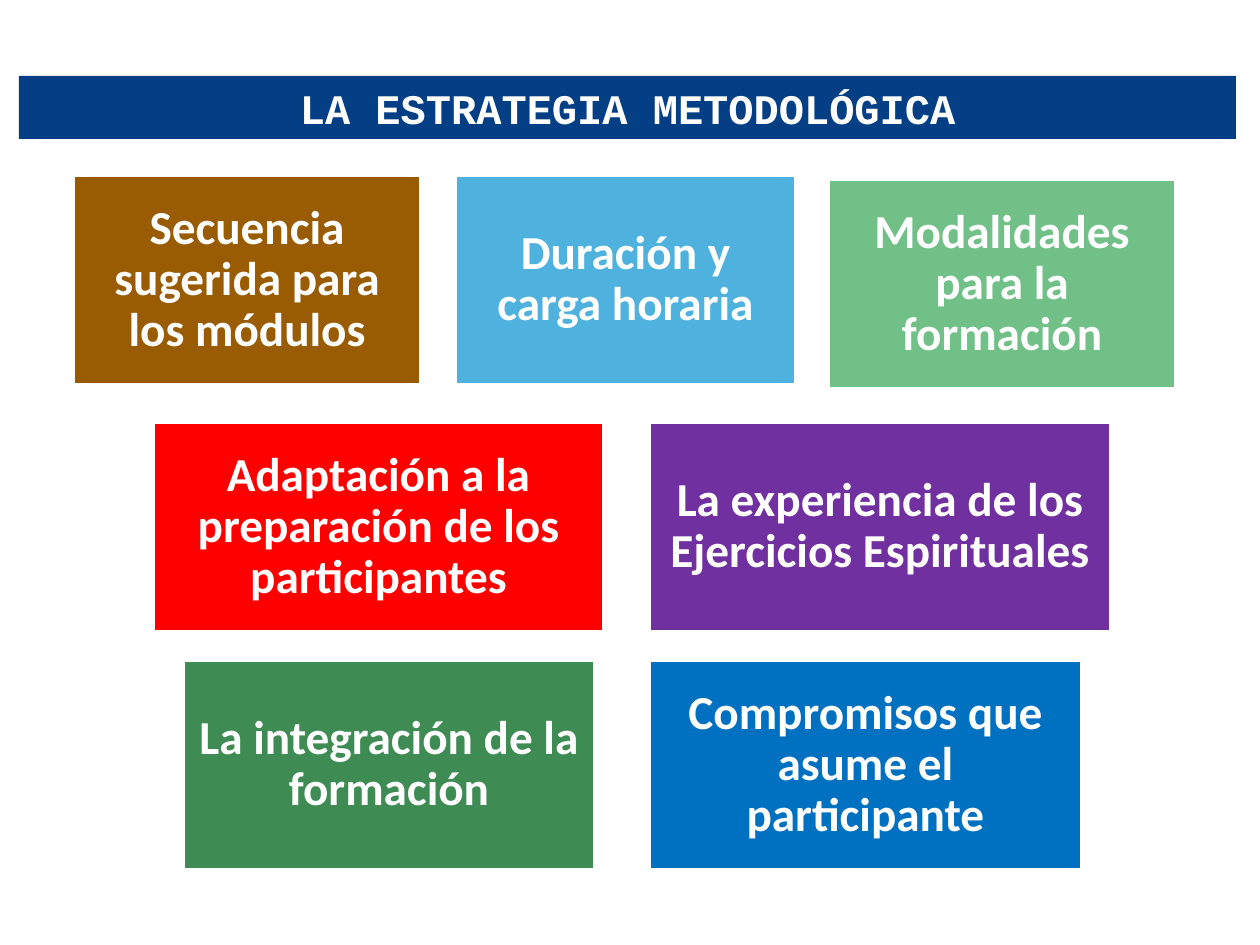
import pptx
import pptx.dml.color
import pptx.enum.shapes
import pptx.enum.text
import pptx.util

PX = 914400 / 126
WHITE = "FFFFFF"
CARD_HEIGHT = 208
CARD_MARGIN = 13

TITLE_FONT = {"name": "Courier New", "size": pptx.util.Pt(24), "bold": True}
CARD_FONT = {"name": "Calibri", "size": pptx.util.Pt(27), "bold": True}

# Each row: top, then cards as (left, top offset, width, fill, text)
CARD_ROWS = [
    (176, [
        (74, 0, 346, "995C02", "Secuencia sugerida para los módulos"),
        (456, 0, 339, "4FB2DE", "Duración y carga horaria"),
        (829, 4, 346, "70C087", "Modalidades para la formación"),
    ]),
    (423, [
        (154, 0, 449, "FF0000", "Adaptación a la preparación de los participantes"),
        (650, 0, 460, "7030A0", "La experiencia de los Ejercicios Espirituales"),
    ]),
    (661, [
        (184, 0, 410, "3E8B54", "La integración de la formación"),
        (650, 0, 431, "0070C0", "Compromisos que asume el participante"),
    ]),
]


def px(length):
    return pptx.util.Emu(round(length * PX))


def color(value):
    return pptx.dml.color.RGBColor.from_string(value)


def set_values(target, values):
    for name, value in values.items():
        setattr(target, name, value)


def add_rectangle(slide, box, fill, text, font):
    """Add a filled rectangle with centred white text."""
    shape = slide.shapes.add_shape(
        pptx.enum.shapes.MSO_SHAPE.RECTANGLE, *map(px, box))
    shape.shadow.inherit = False
    shape.fill.solid()
    shape.fill.fore_color.rgb = color(fill)
    shape.line.fill.background()
    shape.text_frame.word_wrap = True
    paragraph = shape.text_frame.paragraphs[0]
    paragraph.alignment = pptx.enum.text.PP_ALIGN.CENTER
    run = paragraph.add_run()
    run.text = text
    set_values(run.font, font)
    run.font.color.rgb = color(WHITE)
    return shape


def add_title(slide, box):
    shape = add_rectangle(slide, box, "043F86", "LA ESTRATEGIA METODOLÓGICA", TITLE_FONT)
    shape.text_frame.vertical_anchor = pptx.enum.text.MSO_ANCHOR.TOP


def add_card(slide, box, fill, text):
    shape = add_rectangle(slide, box, fill, text, CARD_FONT)
    shape.line.color.rgb = color(WHITE)
    shape.line.width = pptx.util.Pt(1.25)
    sides = ("left", "top", "right", "bottom")
    set_values(shape.text_frame, {f"margin_{side}": px(CARD_MARGIN) for side in sides})
    shape.text_frame.vertical_anchor = pptx.enum.text.MSO_ANCHOR.MIDDLE
    shape.text_frame.paragraphs[0].line_spacing = 0.9


def add_card_row(slide, top, cards):
    for left, offset, width, fill, text in cards:
        add_card(slide, (left, top + offset, width, CARD_HEIGHT), fill, text)


def main():
    presentation = pptx.Presentation()
    set_values(presentation, {"slide_width": px(1260), "slide_height": px(945)})
    slide = presentation.slides.add_slide(presentation.slide_layouts[6])
    add_title(slide, (19, 76, 1217, 63))
    for top, cards in CARD_ROWS:
        add_card_row(slide, top, cards)
    presentation.save("out.pptx")


if __name__ == "__main__":
    main()
